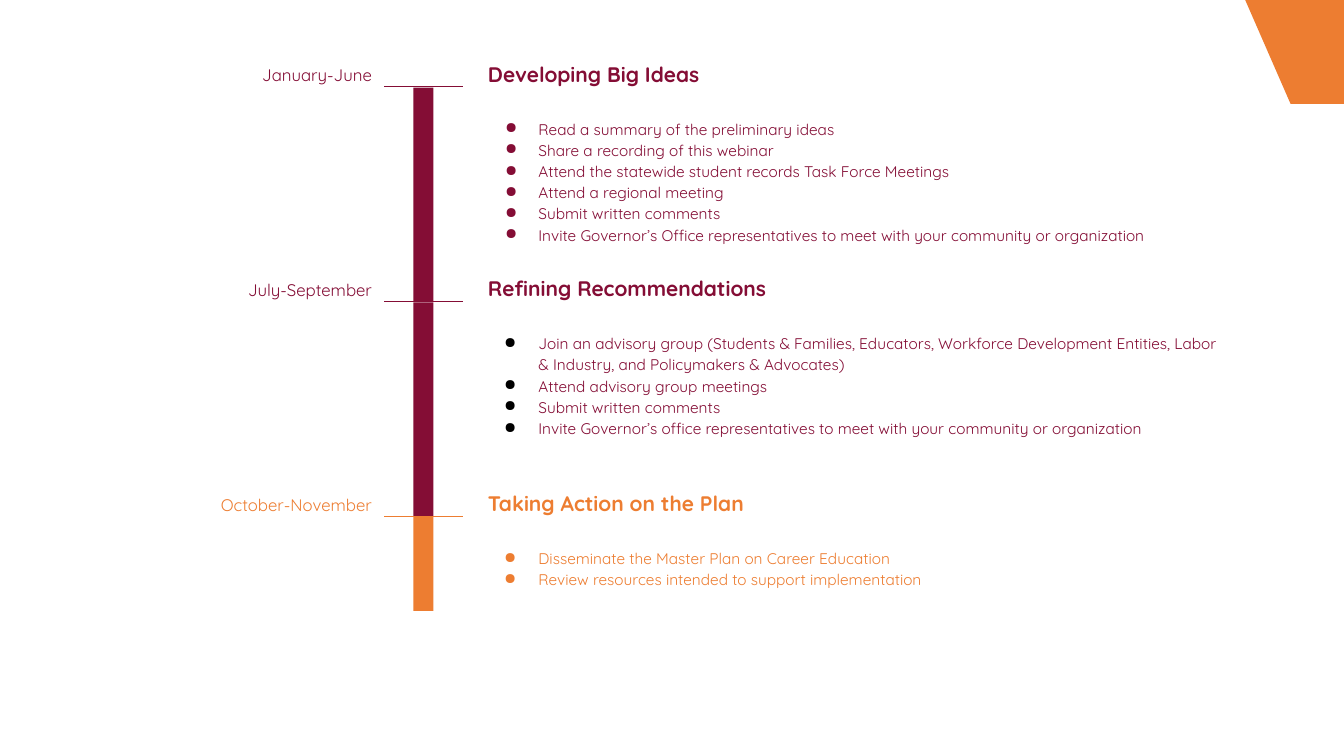
from dataclasses import dataclass

from lxml.etree import SubElement
from pptx import Presentation
from pptx.dml.color import RGBColor
from pptx.enum.shapes import MSO_CONNECTOR, MSO_SHAPE
from pptx.enum.text import PP_ALIGN
from pptx.oxml.ns import qn
from pptx.util import Inches, Pt


@dataclass(frozen=True)
class Theme:
    """Colours, font and type sizes of the slide."""
    wine: str = "840D35"
    orange: str = "ED7D31"
    black: str = "000000"
    font: str = "Quicksand"
    heading_size: int = 15
    date_size: int = 12
    action_size: int = 11
    line_spacing: float = 1.15


@dataclass(frozen=True)
class Stage:
    """One period of the timeline."""
    dates: str
    heading: str
    actions: tuple
    color: str
    bullet_color: str
    bar_height: float
    hanging: float = 0.34


THEME = Theme()
FIRST_TICK, STAGE_PITCH = 0.86, 2.13
TICK_LEFT, TICK_RIGHT = 3.81, 4.59
BAR_LEFT, BAR_WIDTH = 4.1, 0.2
DATE_LEFT, DATE_WIDTH = 1.82, 2.0
TEXT_LEFT, HEADING_WIDTH, ACTIONS_WIDTH = 4.71, 3.99, 7.55

STAGES = (
    Stage("January-June", "Developing Big Ideas", (
        "Read a summary of the preliminary ideas",
        "Share a recording of this webinar",
        "Attend the statewide student records Task Force Meetings",
        "Attend a regional meeting",
        "Submit written comments",
        "Invite Governor’s Office representatives to meet with your community or organization",
    ), THEME.wine, THEME.wine, 2.12, 0.33),
    Stage("July-September", "Refining Recommendations", (
        "Join an advisory group (Students & Families, Educators, Workforce Development Entities, "
        "Labor & Industry, and Policymakers & Advocates)",
        "Attend advisory group meetings",
        "Submit written comments",
        "Invite Governor’s office representatives to meet with your community or organization",
    ), THEME.wine, THEME.black, 2.12),
    Stage("October-November", "Taking Action on the Plan", (
        "Disseminate the Master Plan on Career Education",
        "Review resources intended to support implementation",
    ), THEME.orange, THEME.orange, 0.93),
)


def fill_plain(shape, color):
    """Give a shape a flat fill without outline or shadow."""
    shape.shadow.inherit = False
    shape.fill.solid()
    shape.fill.fore_color.rgb = RGBColor.from_string(color)
    shape.line.fill.background()


def add_corner(slide):
    """Draw the slanted block in the top right corner."""
    outline = slide.shapes.build_freeform(Inches(12.35), 0)
    outline.add_line_segments([
        (Inches(x), Inches(y)) for x, y in ((13.33, 0), (13.33, 1.03), (12.8, 1.03))
    ])
    fill_plain(outline.convert_to_shape(), THEME.orange)


def add_bar(slide, top, height, color):
    """Draw one segment of the vertical time bar."""
    bar = slide.shapes.add_shape(
        MSO_SHAPE.RECTANGLE, Inches(BAR_LEFT), Inches(top), Inches(BAR_WIDTH), Inches(height))
    fill_plain(bar, color)


def add_tick(slide, y, color):
    """Draw the thin line that marks the start of a stage."""
    tick = slide.shapes.add_connector(
        MSO_CONNECTOR.STRAIGHT, Inches(TICK_RIGHT), Inches(y), Inches(TICK_LEFT), Inches(y))
    tick.line.color.rgb = RGBColor.from_string(color)
    tick.line.width = Pt(0.75)
    SubElement(tick._element.spPr, qn("a:effectLst"))


def add_text(slide, left, top, width, height, lines, size, color, bold=False, align=PP_ALIGN.LEFT):
    """Add a text box with one paragraph per line and return its paragraphs."""
    box = slide.shapes.add_textbox(Inches(left), Inches(top), Inches(width), Inches(height))
    frame = box.text_frame
    frame.word_wrap = True
    frame.margin_left = frame.margin_right = Inches(0.13)
    frame.margin_top = frame.margin_bottom = Inches(0.13)
    frame.text = "\n".join(lines)
    for paragraph in frame.paragraphs:
        paragraph.alignment = align
        paragraph.line_spacing = THEME.line_spacing
        for run in paragraph.runs:
            run.font.name = THEME.font
            run.font.size = Pt(size)
            run.font.bold = bold
            run.font.color.rgb = RGBColor.from_string(color)
    return frame.paragraphs


def add_bullet(paragraph, color, hanging):
    """Turn a paragraph into a round-bulleted item."""
    properties = paragraph._p.get_or_add_pPr()
    properties.set("marL", str(Inches(0.5)))
    properties.set("indent", str(-Inches(hanging)))
    bullet_color = SubElement(properties, qn("a:buClr"))
    SubElement(bullet_color, qn("a:srgbClr"), val=color)
    SubElement(properties, qn("a:buChar"), char="●")


def add_stage(slide, stage, y):
    """Draw a stage whose tick lies at height y."""
    add_bar(slide, y + 0.01, stage.bar_height, stage.color)
    add_tick(slide, y, stage.color)
    add_text(slide, TEXT_LEFT, y - 0.42, HEADING_WIDTH, 0.59, [stage.heading],
             THEME.heading_size, stage.color, bold=True)
    actions = add_text(slide, TEXT_LEFT, y + 0.17, ACTIONS_WIDTH, 0.88, stage.actions,
                       THEME.action_size, stage.color)
    for action in actions:
        add_bullet(action, stage.bullet_color, stage.hanging)
    add_text(slide, DATE_LEFT, y - 0.36, DATE_WIDTH, 0.74, [stage.dates],
             THEME.date_size, stage.color, align=PP_ALIGN.RIGHT)


def main():
    """Build the timeline slide and save it."""
    deck = Presentation()
    deck.slide_width, deck.slide_height = Inches(13.33), Inches(7.5)
    slide = deck.slides.add_slide(deck.slide_layouts[6])
    add_corner(slide)
    for index, stage in enumerate(STAGES):
        add_stage(slide, stage, FIRST_TICK + index * STAGE_PITCH)
    deck.save("out.pptx")


if __name__ == "__main__":
    main()
